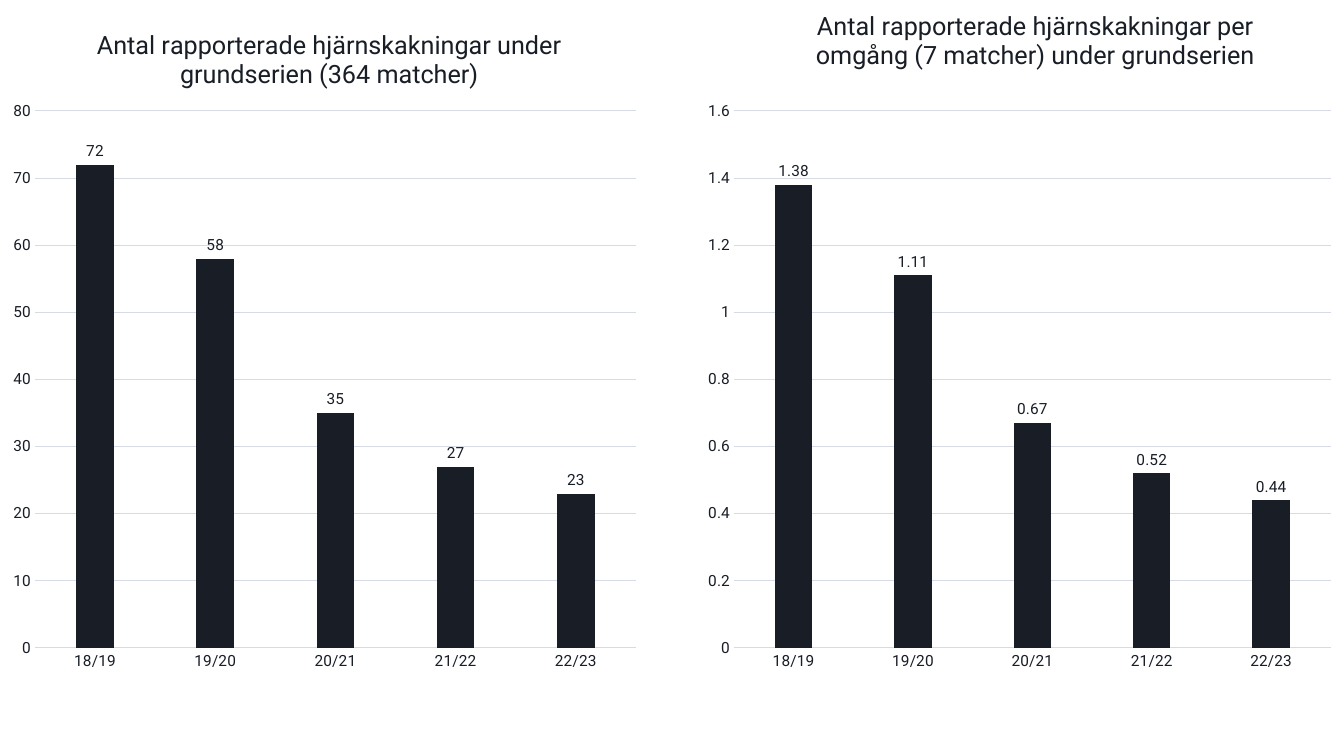
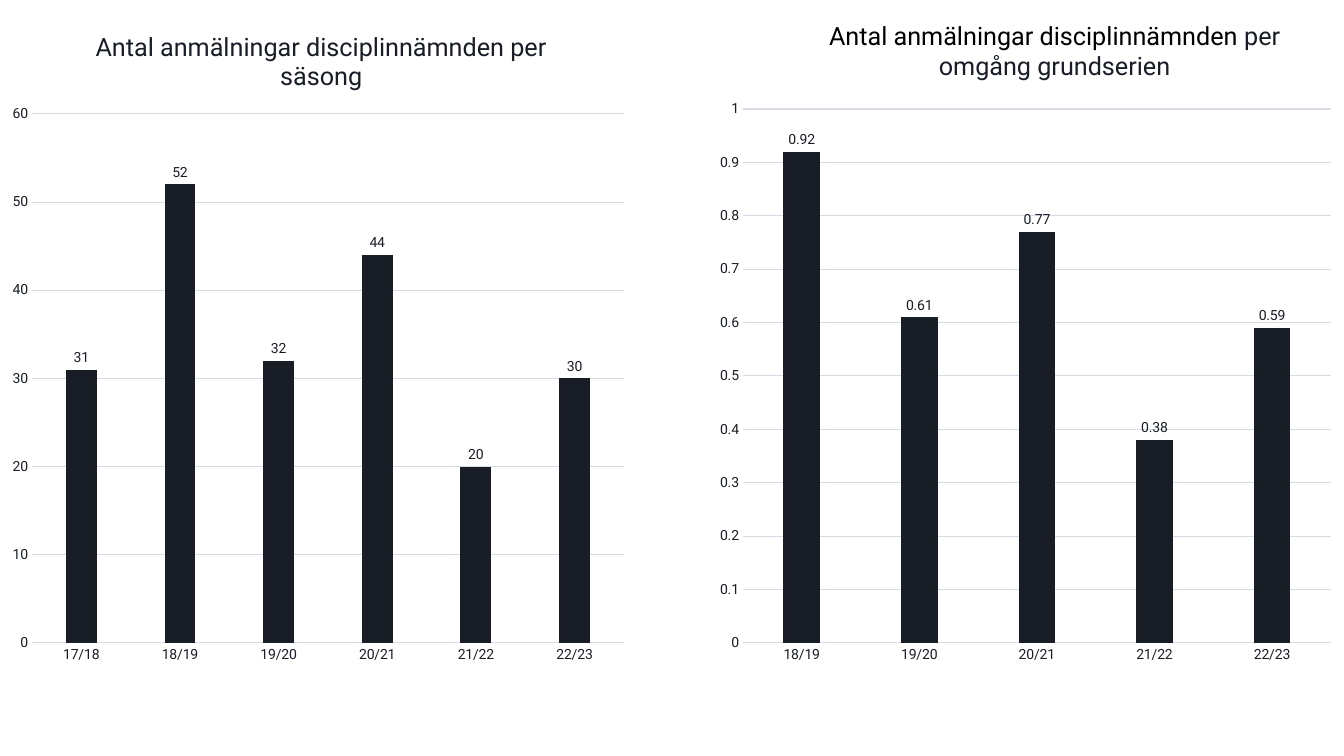
"""Build two slides, each with a pair of column charts on Swedish ice hockey seasons."""
from lxml.etree import SubElement
from pptx import Presentation
from pptx.chart.data import CategoryChartData
from pptx.dml.color import RGBColor
from pptx.enum.chart import XL_CHART_TYPE, XL_LABEL_POSITION, XL_TICK_MARK
from pptx.oxml import parse_xml
from pptx.oxml.ns import nsdecls, qn
from pptx.util import Pt

FONT = "Roboto"
COLORS = {"ink": "181D26", "grid": "D6DBE5", "black": "000000"}
SLIDE_W, SLIDE_H = 960, 540
TITLE_SIZE = 18
SEASONS = ["17/18", "18/19", "19/20", "20/21", "21/22", "22/23"]

SLIDES = [
    {
        "size": (464, 490),
        "label_size": 11,
        "charts": [
            {
                "title": [("Antal rapporterade hjärnskakningar under grundserien (364 matcher)", "ink")],
                "title_at": (66, 17),
                "plot": (25, 79.3, 429.3, 383.6),
                "values": [72, 58, 35, 27, 23],
                "scale": (80, 10),
            },
            {
                "title": [("Antal rapporterade hjärnskakningar per omgång (7 matcher) under grundserien", "ink")],
                "title_at": (83.5, 3.5),
                "plot": (28.3, 79.3, 426.4, 383.6),
                "values": [1.38, 1.11, 0.67, 0.52, 0.44],
                "scale": (1.6, 0.2),
            },
        ],
    },
    {
        "size": (454, 483),
        "label_size": 10,
        "charts": [
            {
                "title": [("Antal anmälningar disciplinnämnden per säsong", "ink")],
                "title_at": (65, 18.5),
                "plot": (22.9, 81.4, 422.8, 377.9),
                "values": [31, 52, 32, 44, 20, 30],
                "scale": (60, 10),
            },
            {
                "title": [("Antal anmälningar disciplinnämnden ", "black"), ("per omgång grundserien", "ink")],
                "title_at": (84, 12.5),
                "plot": (24.7, 77.9, 420, 381.4),
                "values": [0.92, 0.61, 0.77, 0.38, 0.59],
                "scale": (1, 0.1),
            },
        ],
    },
]


def rgb(name):
    return RGBColor.from_string(COLORS[name])


def style_font(font, size, color="ink"):
    font.name, font.size, font.bold = FONT, Pt(size), False
    font.color.rgb = rgb(color)


def style_line(line):
    line.color.rgb = rgb("grid")
    line.width = Pt(0.75)


def set_layout(parent, box, size, inner=False):
    """Place a chart part at a box given in points within the chart."""
    layout = parse_xml(f"<c:layout {nsdecls('c')}><c:manualLayout/></c:layout>")
    manual = layout[0]
    entries = [("layoutTarget", "inner")] if inner else []
    entries += [("xMode", "edge"), ("yMode", "edge")]
    entries += [(key, f"{part / size[i % 2]:.4f}") for i, (key, part) in enumerate(zip("xywh", box))]
    for key, value in entries:
        SubElement(manual, qn(f"c:{key}")).set("val", value)
    old = parent.find(qn("c:layout"))
    if old is None:
        parent.insert(0, layout)
    else:
        parent.replace(old, layout)


def add_title(chart, spec, size):
    title = chart.chart_title
    p = title.text_frame.paragraphs[0]
    style_font(p.font, TITLE_SIZE)
    for text, color in spec["title"]:
        r = p.add_run()
        r.text = text
        style_font(r.font, TITLE_SIZE, color)
    set_layout(title.element, spec["title_at"], size)


def style_axes(chart, scale, label_size):
    for axis in (chart.category_axis, chart.value_axis):
        axis.major_tick_mark = axis.minor_tick_mark = XL_TICK_MARK.NONE
        style_font(axis.tick_labels.font, label_size)
    chart.category_axis.has_major_gridlines = False
    style_line(chart.category_axis.format.line)
    values = chart.value_axis
    values.minimum_scale = 0
    values.maximum_scale, values.major_unit = scale
    values.format.line.fill.background()
    values.has_major_gridlines = True
    style_line(values.major_gridlines.format.line)


def add_column_chart(s, spec, left, size, label_size):
    data = CategoryChartData()
    data.categories = SEASONS[-len(spec["values"]):]
    data.add_series("Series 1", spec["values"])
    chart = s.shapes.add_chart(
        XL_CHART_TYPE.COLUMN_CLUSTERED, Pt(left), 0, Pt(size[0]), Pt(size[1]), data
    ).chart
    style_font(chart.font, 10)
    chart.has_legend = False
    add_title(chart, spec, size)
    style_axes(chart, spec["scale"], label_size)
    plot = chart.plots[0]
    plot.gap_width, plot.overlap, plot.vary_by_categories = 219, -27, False
    fill = plot.series[0].format.fill
    fill.solid()
    fill.fore_color.rgb = rgb("ink")
    labels = plot.series[0].data_labels
    labels.show_value = True
    labels.position = XL_LABEL_POSITION.OUTSIDE_END
    style_font(labels.font, label_size)
    set_layout(chart.element.find(".//" + qn("c:plotArea")), spec["plot"], size, inner=True)


def main():
    prs = Presentation()
    prs.slide_width, prs.slide_height = Pt(SLIDE_W), Pt(SLIDE_H)
    for page in SLIDES:
        s = prs.slides.add_slide(prs.slide_layouts[6])
        size = page["size"]
        for spec, left in zip(page["charts"], (0, SLIDE_W - size[0])):
            add_column_chart(s, spec, left, size, page["label_size"])
    prs.save("out.pptx")


if __name__ == "__main__":
    main()
